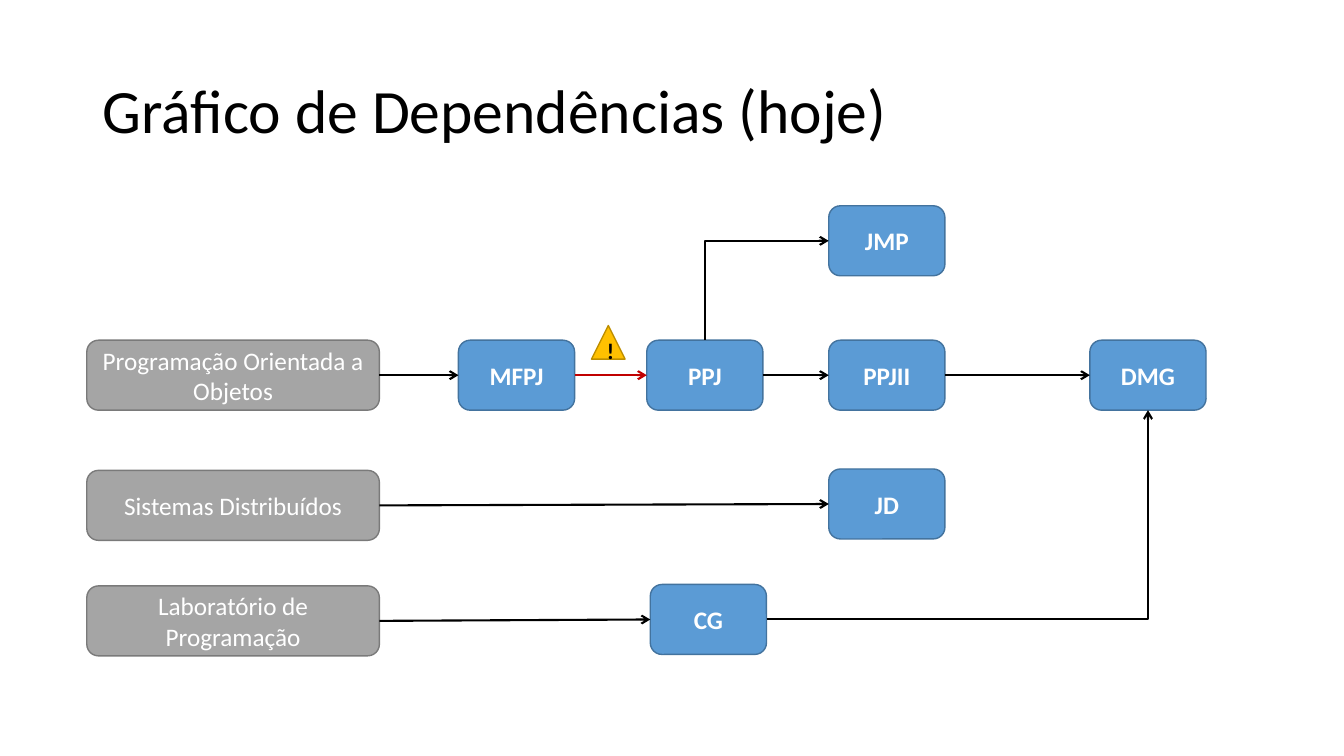
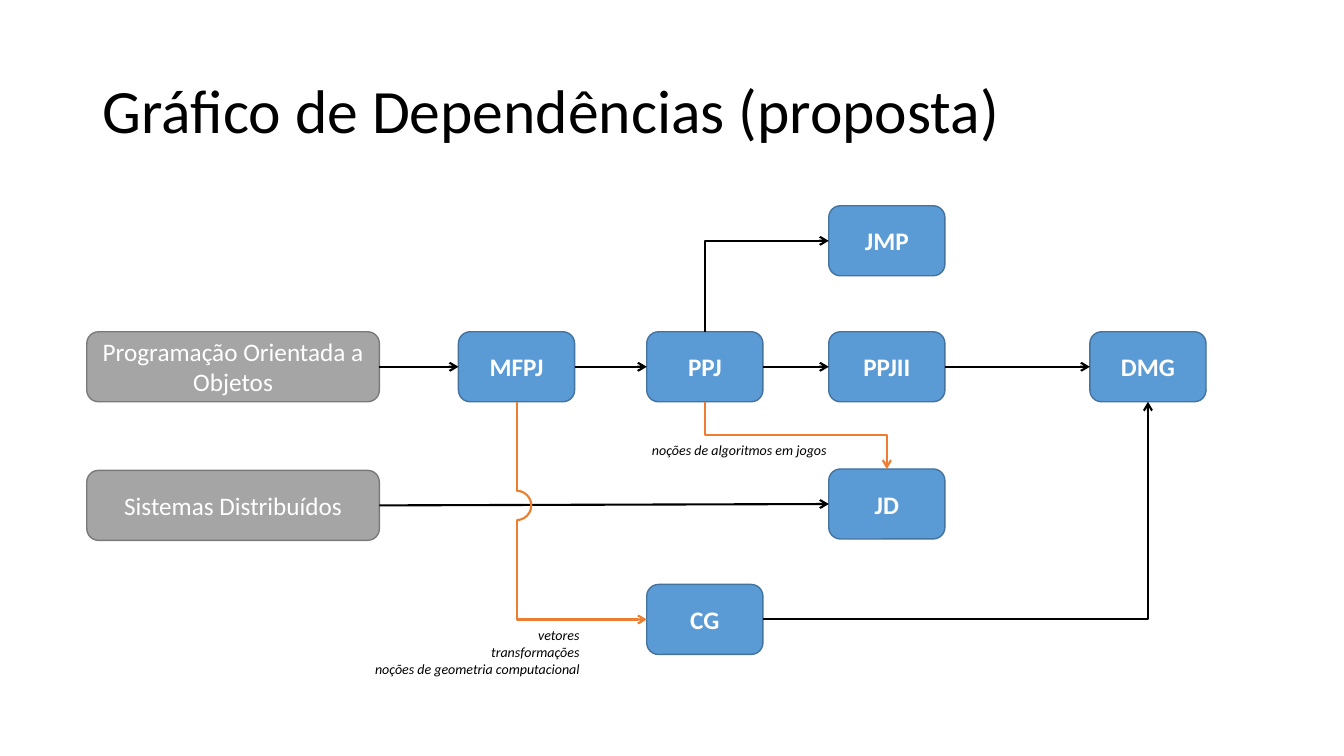
from lxml import etree
from pptx import Presentation
from pptx.dml.color import RGBColor
from pptx.enum.shapes import MSO_CONNECTOR, MSO_SHAPE
from pptx.enum.text import MSO_ANCHOR, MSO_AUTO_SIZE, PP_ALIGN
from pptx.oxml.ns import qn
from pptx.util import Pt

STRAIGHT, ELBOW = MSO_CONNECTOR.STRAIGHT, MSO_CONNECTOR.ELBOW
ROUNDED, TRIANGLE, ARC = MSO_SHAPE.ROUNDED_RECTANGLE, MSO_SHAPE.ISOSCELES_TRIANGLE, MSO_SHAPE.ARC
LEFT, CENTER, RIGHT = PP_ALIGN.LEFT, PP_ALIGN.CENTER, PP_ALIGN.RIGHT
MIDDLE = MSO_ANCHOR.MIDDLE
GROW = MSO_AUTO_SIZE.SHAPE_TO_FIT_TEXT
SIDE_TOP, SIDE_LEFT, SIDE_BOTTOM, SIDE_RIGHT = range(4)

FONT = "Calibri"
BLACK = RGBColor(0x00, 0x00, 0x00)
WHITE = RGBColor(0xFF, 0xFF, 0xFF)
BLUE, BLUE_EDGE = RGBColor(0x5B, 0x9B, 0xD5), RGBColor(0x43, 0x73, 0x9E)
GRAY, GRAY_EDGE = RGBColor(0xA5, 0xA5, 0xA5), RGBColor(0x7A, 0x7A, 0x7A)
AMBER, AMBER_EDGE = RGBColor(0xFF, 0xC0, 0x00), RGBColor(0xBD, 0x8E, 0x00)
RED = RGBColor(0xC0, 0x00, 0x00)
ORANGE = RGBColor(0xED, 0x7D, 0x31)

POO = "Programação Orientada a Objetos"
SISTEMAS = "Sistemas Distribuídos"
LABORATORIO = "Laboratório de Programação"

BOX_HEIGHT, COURSE_WIDTH, PREREQ_WIDTH = 50, 83, 209
PREREQ_X = 62
MFPJ_X, PPJ_X, PPJII_X, DMG_X = 327.5, 462, 592, 778.5
JMP_Y, JD_Y, CG_Y = 147, 335, 417.5
SISTEMAS_Y, LABORATORIO_Y = 336, 418.5

MAIN_CHAIN = [(POO, "MFPJ"), ("MFPJ", "PPJ"), ("PPJ", "PPJII"), ("PPJII", "DMG")]

SLIDES = [
    {
        "title": "Gráfico de Dependências (hoje)",
        "main_y": 243,
        "cg_x": 464.5,
        "prereqs": [(POO, 243), (SISTEMAS, SISTEMAS_Y), (LABORATORIO, LABORATORIO_Y)],
        "links": MAIN_CHAIN + [(SISTEMAS, "JD"), (LABORATORIO, "CG")],
        "warned": ("MFPJ", "PPJ"),
    },
    {
        "title": "Gráfico de Dependências (proposta)",
        "main_y": 237,
        "cg_x": PPJ_X,
        "prereqs": [(POO, 237), (SISTEMAS, SISTEMAS_Y)],
        "links": MAIN_CHAIN + [(SISTEMAS, "JD")],
        "warned": None,
    },
]
NOTES = [
    (["vetores", "transformações", "noções de geometria computacional"], (126, 444, 295, 44)),
    (["noções de algoritmos em jogos"], (426, 312, 171.5, 20)),
]
HOP_Y, HOP_SIZE = 361, 21


def points(*values):
    return [Pt(value) for value in values]


def write(frame, lines, size, color, align, bold=False, italic=False):
    for number, line in enumerate(lines):
        paragraph = frame.add_paragraph() if number else frame.paragraphs[0]
        paragraph.alignment = align
        run = paragraph.add_run()
        run.text = line
        font = run.font
        font.name, font.size, font.bold, font.italic = FONT, Pt(size), bold, italic
        font.color.rgb = color


def add_block(slide, preset, frame, fill, edge, text, size, color, bold):
    block = slide.shapes.add_shape(preset, *points(*frame))
    block.shadow.inherit = False
    block.fill.solid()
    block.fill.fore_color.rgb = fill
    block.line.color.rgb = edge
    block.line.width = Pt(1)
    block.text_frame.word_wrap = True
    block.text_frame.vertical_anchor = MIDDLE
    write(block.text_frame, [text], size, color, CENTER, bold)
    return block


def side_point(block, side):
    across = {SIDE_LEFT: 0, SIDE_RIGHT: block.width}.get(side, block.width // 2)
    down = {SIDE_TOP: 0, SIDE_BOTTOM: block.height}.get(side, block.height // 2)
    return block.left + across, block.top + down


def add_link(slide, kind, begin, end, color=BLACK, arrow="tailEnd"):
    ends = [side_point(*e) if hasattr(e[0], "width") else e for e in (begin, end)]
    link = slide.shapes.add_connector(kind, *ends[0], *ends[1])
    for place, connect in ((begin, link.begin_connect), (end, link.end_connect)):
        if hasattr(place[0], "width"):
            connect(*place)
    link.line.color.rgb = color
    link.line.width = Pt(1.5)
    properties = link.element.spPr
    if arrow:
        etree.SubElement(properties.find(qn("a:ln")), qn("a:" + arrow), type="arrow")
    etree.SubElement(properties, qn("a:effectLst"))
    return link


def add_corner(slide, begin, end, color=BLACK, arrow="tailEnd"):
    corner = add_link(slide, ELBOW, begin, end, color, arrow)
    corner.element.spPr.find(qn("a:prstGeom")).set("prst", "bentConnector2")


def add_step_down(slide, begin, end, color):
    step = add_link(slide, ELBOW, begin, end, color)
    center_x, center_y = step.left + step.width // 2, step.top + step.height // 2
    step.width, step.height = step.height, step.width
    step.left, step.top = center_x - step.width // 2, center_y - step.height // 2
    transform = step.element.spPr.find(qn("a:xfrm"))
    transform.set("rot", "5400000")
    transform.set("flipV", "1")


def add_title(slide, text):
    title = slide.shapes.title
    title.left, title.top, title.width, title.height = points(66, 29, 828, 104)
    title.text_frame.vertical_anchor = MIDDLE
    write(title.text_frame, [text], 44, BLACK, LEFT)
    title.text_frame.paragraphs[0].line_spacing = 0.9


def add_graph(slide, content):
    main_y = content["main_y"]
    courses = [
        ("MFPJ", MFPJ_X, main_y), ("PPJ", PPJ_X, main_y), ("PPJII", PPJII_X, main_y),
        ("CG", content["cg_x"], CG_Y), ("DMG", DMG_X, main_y),
        ("JMP", PPJII_X, JMP_Y), ("JD", PPJII_X, JD_Y),
    ]
    blocks = {}
    for name, x, y in courses:
        blocks[name] = add_block(slide, ROUNDED, (x, y, COURSE_WIDTH, BOX_HEIGHT),
                                 BLUE, BLUE_EDGE, name, 18, WHITE, True)
    for name, y in content["prereqs"]:
        blocks[name] = add_block(slide, ROUNDED, (PREREQ_X, y, PREREQ_WIDTH, BOX_HEIGHT),
                                 GRAY, GRAY_EDGE, name, 18, WHITE, False)
    for link in content["links"]:
        source, target = link
        add_link(slide, STRAIGHT, (blocks[source], SIDE_RIGHT), (blocks[target], SIDE_LEFT),
                 RED if link == content["warned"] else BLACK)
    add_corner(slide, (blocks["JMP"], SIDE_LEFT), (blocks["PPJ"], SIDE_TOP), arrow="headEnd")
    add_corner(slide, (blocks["CG"], SIDE_RIGHT), (blocks["DMG"], SIDE_BOTTOM))
    return blocks


def add_warning(slide):
    add_block(slide, TRIANGLE, (422.5, 232.5, 24, 24), AMBER, AMBER_EDGE, "!", 16, BLACK, True)


def add_proposal(slide, blocks):
    add_step_down(slide, (blocks["PPJ"], SIDE_BOTTOM), (blocks["JD"], SIDE_TOP), ORANGE)
    hop_x = side_point(blocks["MFPJ"], SIDE_BOTTOM)[0]
    radius = Pt(HOP_SIZE / 2)
    hop_top, hop_bottom = Pt(HOP_Y) - radius, Pt(HOP_Y) + radius
    add_link(slide, STRAIGHT, (blocks["MFPJ"], SIDE_BOTTOM), (hop_x, hop_top), ORANGE, None)
    hop = slide.shapes.add_shape(ARC, hop_x - radius, hop_top, Pt(HOP_SIZE), Pt(HOP_SIZE))
    hop.shadow.inherit = False
    hop.fill.background()
    hop.line.color.rgb = ORANGE
    hop.line.width = Pt(1.5)
    hop.adjustments[0], hop.adjustments[1] = 162, 54
    add_corner(slide, (blocks["CG"], SIDE_LEFT), (hop_x, hop_bottom), ORANGE, "headEnd")
    for lines, frame in NOTES:
        note = slide.shapes.add_textbox(*points(*frame)).text_frame
        note.word_wrap = True
        note.auto_size = GROW
        write(note, lines, 10, BLACK, RIGHT, italic=True)


def main():
    deck = Presentation()
    deck.slide_width, deck.slide_height = points(960, 540)
    for content in SLIDES:
        slide = deck.slides.add_slide(deck.slide_layouts[5])
        add_title(slide, content["title"])
        blocks = add_graph(slide, content)
        if content["warned"]:
            add_warning(slide)
        else:
            add_proposal(slide, blocks)
    deck.save("out.pptx")


if __name__ == "__main__":
    main()
